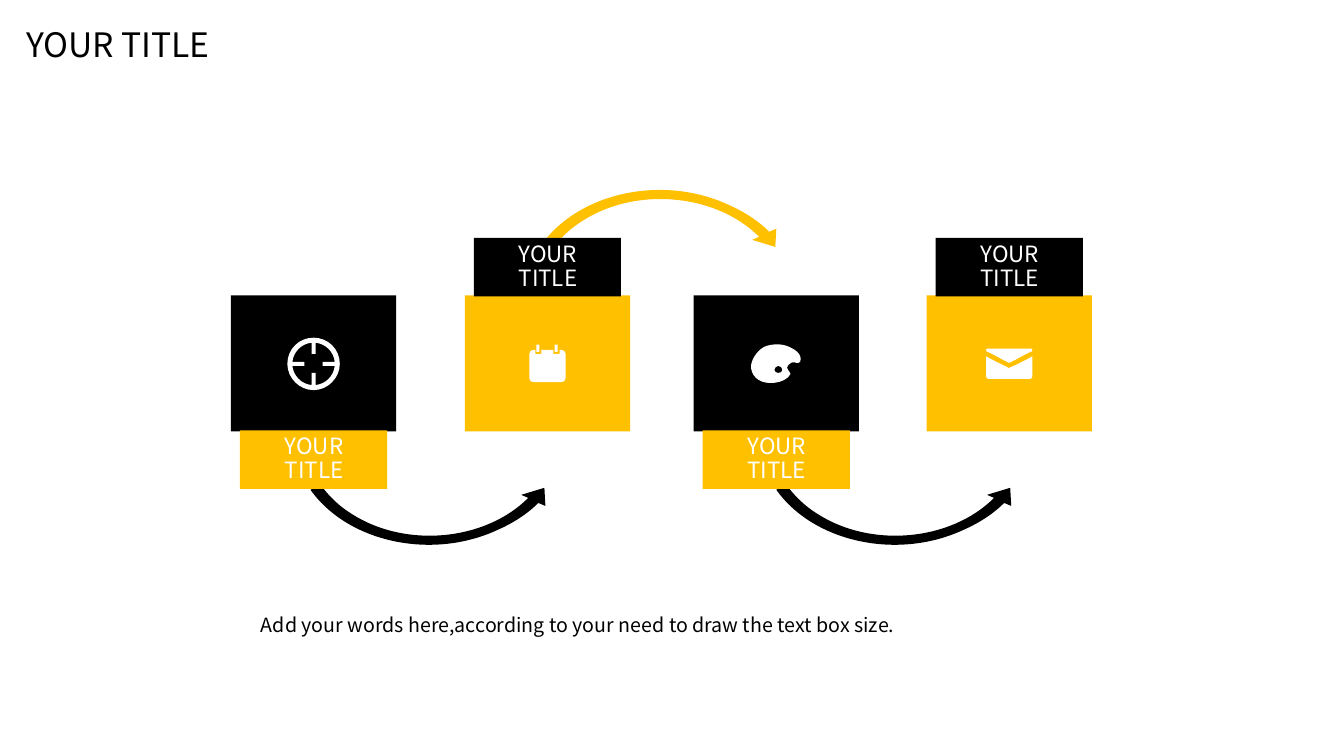
from lxml import etree
from pptx import Presentation
from pptx.dml.color import RGBColor
from pptx.enum.shapes import MSO_SHAPE
from pptx.enum.text import MSO_ANCHOR, PP_ALIGN
from pptx.oxml.ns import qn
from pptx.util import Inches, Pt

RECTANGLE = MSO_SHAPE.RECTANGLE
MIDDLE = MSO_ANCHOR.MIDDLE
CENTER = PP_ALIGN.CENTER
FONT = "Noto Sans CJK JP"
BLACK, YELLOW, WHITE = "000000", "FFC000", "FFFFFF"
COMMANDS = {2: "a:lnTo", 6: "a:cubicBezTo"}


def paint(fill, color):
    fill.solid()
    fill.fore_color.rgb = RGBColor.from_string(color)


def draw_outline(shapes, box, contours, color):
    """Each contour holds points (x, y) and Bezier curves (x1, y1, x2, y2, x3, y3)."""
    left, top, width, height = box
    builder = shapes.build_freeform(Inches(left), Inches(top), scale=1.0)
    builder.add_line_segments([(Inches(left + width), Inches(top + height))])
    outline = builder.convert_to_shape()
    outline.shadow.inherit = False
    paint(outline.fill, color)
    outline.line.fill.background()
    # Curves need XML: refill the box with the contours
    geometry = outline._element.find(".//" + qn("a:path"))
    for child in list(geometry):
        geometry.remove(child)
    for contour in contours:
        for index, segment in enumerate(contour):
            name = COMMANDS[len(segment)] if index else "a:moveTo"
            command = etree.SubElement(geometry, qn(name))
            for x, y in zip(segment[::2], segment[1::2]):
                point = etree.SubElement(command, qn("a:pt"))
                point.set("x", str(Inches(x - left)))
                point.set("y", str(Inches(y - top)))
        etree.SubElement(geometry, qn("a:close"))


presentation = Presentation()
presentation.slide_width = Inches(13.33)
presentation.slide_height = Inches(7.5)
slide = presentation.slides.add_slide(presentation.slide_layouts[6])

# Curved arrows, the yellow one mirrored upwards
arrow = [(0, 0.05), (0.37, 0.57, 1.2, 0.75, 1.85, 0.45), (2.01, 0.38, 2.15, 0.29, 2.26, 0.18),
         (2.33, 0.21), (2.32, 0.03), (2.09, 0.1), (2.16, 0.13),
         (1.73, 0.56, 0.94, 0.63, 0.41, 0.29), (0.28, 0.21, 0.18, 0.11, 0.1, 0)]
for left, top, start, flip, color in [(7.7, 4.81, 4.81, 1, BLACK), (3.08, 4.81, 4.81, 1, BLACK),
                                      (5.37, 1.88, 2.48, -1, YELLOW)]:
    placed = [tuple(start + flip * value if index % 2 else left + value
                    for index, value in enumerate(segment)) for segment in arrow]
    draw_outline(slide.shapes, (left, top, 2.33, 0.6), [placed], color)

# Four tiles, with labels below and above by turns
texts = []
for index, left in enumerate([2.29, 4.61, 6.88, 9.19]):
    if index % 2 == 0:
        tile_color, label_color, label_top = BLACK, YELLOW, 4.27
    else:
        tile_color, label_color, label_top = YELLOW, BLACK, 2.36
    for x, y, width, height, color in [(left, 2.93, 1.64, 1.35, tile_color),
                                       (left + 0.09, label_top, 1.46, 0.58, label_color)]:
        shape = slide.shapes.add_shape(RECTANGLE, Inches(x), Inches(y),
                                       Inches(width), Inches(height))
        shape.shadow.inherit = False
        paint(shape.fill, color)
        shape.line.fill.background()
    texts.append(("YOUR TITLE", left + 0.2, label_top + 0.1, 1.25, 0.38, 16, WHITE))

# Envelope icon: body and flap
draw_outline(slide.shapes, (9.78, 3.46, 0.46, 0.3), [
    [(10.23, 3.54), (10.22, 3.55, 10.04, 3.64, 10.03, 3.64), (10.02, 3.65, 10.02, 3.65, 10.01, 3.65),
     (10, 3.65, 9.99, 3.65, 9.99, 3.64), (9.98, 3.64, 9.8, 3.55, 9.79, 3.54),
     (9.78, 3.53, 9.78, 3.54, 9.78, 3.54), (9.78, 3.55, 9.78, 3.73, 9.78, 3.73),
     (9.78, 3.74, 9.79, 3.76, 9.8, 3.76), (10.22, 3.76), (10.23, 3.76, 10.24, 3.74, 10.24, 3.73),
     (10.24, 3.73, 10.24, 3.55, 10.24, 3.54), (10.24, 3.54, 10.24, 3.53, 10.23, 3.54)],
    [(9.79, 3.49), (9.81, 3.49, 9.98, 3.59, 9.99, 3.59), (9.99, 3.59, 10, 3.6, 10.01, 3.6),
     (10.02, 3.6, 10.03, 3.59, 10.03, 3.59), (10.04, 3.59, 10.21, 3.49, 10.23, 3.49),
     (10.24, 3.48, 10.25, 3.46, 10.23, 3.46), (9.79, 3.46), (9.77, 3.46, 9.78, 3.48, 9.79, 3.49)],
], WHITE)

# Crosshair icon
draw_outline(slide.shapes, (2.85, 3.35, 0.52, 0.52), [
    [(3.13, 3.82), (3.13, 3.7), (3.09, 3.7), (3.09, 3.82), (2.99, 3.81, 2.91, 3.73, 2.9, 3.63),
     (3.02, 3.63), (3.02, 3.59), (2.9, 3.59), (2.91, 3.49, 2.99, 3.41, 3.09, 3.4),
     (3.09, 3.51), (3.13, 3.51), (3.13, 3.4), (3.23, 3.41, 3.31, 3.49, 3.32, 3.59),
     (3.2, 3.59), (3.2, 3.63), (3.32, 3.63), (3.31, 3.73, 3.23, 3.81, 3.13, 3.82)],
    [(3.11, 3.35), (2.97, 3.35, 2.85, 3.46, 2.85, 3.61), (2.85, 3.75, 2.97, 3.87, 3.11, 3.87),
     (3.25, 3.87, 3.37, 3.75, 3.37, 3.61), (3.37, 3.46, 3.25, 3.35, 3.11, 3.35)],
], WHITE)

# Palette icon
draw_outline(slide.shapes, (7.45, 3.41, 0.49, 0.38), [
    [(7.72, 3.7), (7.7, 3.7, 7.68, 3.69, 7.68, 3.67), (7.68, 3.65, 7.7, 3.63, 7.72, 3.63),
     (7.74, 3.63, 7.76, 3.65, 7.76, 3.67), (7.76, 3.69, 7.74, 3.7, 7.72, 3.7)],
    [(7.88, 3.47), (7.8, 3.42, 7.72, 3.4, 7.61, 3.43), (7.53, 3.45, 7.46, 3.55, 7.45, 3.62),
     (7.44, 3.72, 7.52, 3.8, 7.64, 3.8), (7.78, 3.8, 7.83, 3.73, 7.84, 3.71),
     (7.84, 3.69, 7.78, 3.65, 7.82, 3.62), (7.86, 3.57, 7.9, 3.61, 7.92, 3.6),
     (7.95, 3.6, 7.96, 3.52, 7.88, 3.47)],
], WHITE)

# Calendar icon: page and rings
calendar = slide.shapes.add_group_shape()
draw_outline(calendar.shapes, (5.25, 3.47, 0.36, 0.32), [
    [(5.57, 3.47), (5.55, 3.47), (5.55, 3.51), (5.49, 3.51), (5.49, 3.47), (5.37, 3.47),
     (5.37, 3.51), (5.31, 3.51), (5.31, 3.47), (5.29, 3.47), (5.27, 3.47, 5.25, 3.49, 5.25, 3.51),
     (5.25, 3.75), (5.25, 3.78, 5.27, 3.79, 5.29, 3.79), (5.57, 3.79),
     (5.59, 3.79, 5.61, 3.78, 5.61, 3.75), (5.61, 3.51), (5.61, 3.49, 5.59, 3.47, 5.57, 3.47)],
], WHITE)
draw_outline(calendar.shapes, (5.32, 3.42, 0.21, 0.07), [
    [(x, 3.42), (x - 0.03, 3.42), (x - 0.03, 3.49), (x, 3.49)] for x in (5.53, 5.35)
], WHITE)

# Tile labels, description and slide title
texts += [
    ("Add your words here,according to your need to draw the text box size.",
     2.49, 6.03, 8.24, 0.34, 14, BLACK),
    ("YOUR TITLE", 0.16, 0.19, 2.35, 0.5, 24, BLACK),
]
for text, left, top, width, height, size, color in texts:
    text_box = slide.shapes.add_textbox(Inches(left), Inches(top), Inches(width), Inches(height))
    text_frame = text_box.text_frame
    text_frame.text = text
    text_frame.word_wrap = True
    paragraph = text_frame.paragraphs[0]
    if color == WHITE:
        text_frame.vertical_anchor = MIDDLE
        paragraph.alignment = CENTER
        paragraph.line_spacing = 0.9
        paragraph.space_before = Pt(10)
    font = paragraph.runs[0].font
    font.name, font.size = FONT, Pt(size)
    paint(font.fill, color)

presentation.save("out.pptx")
